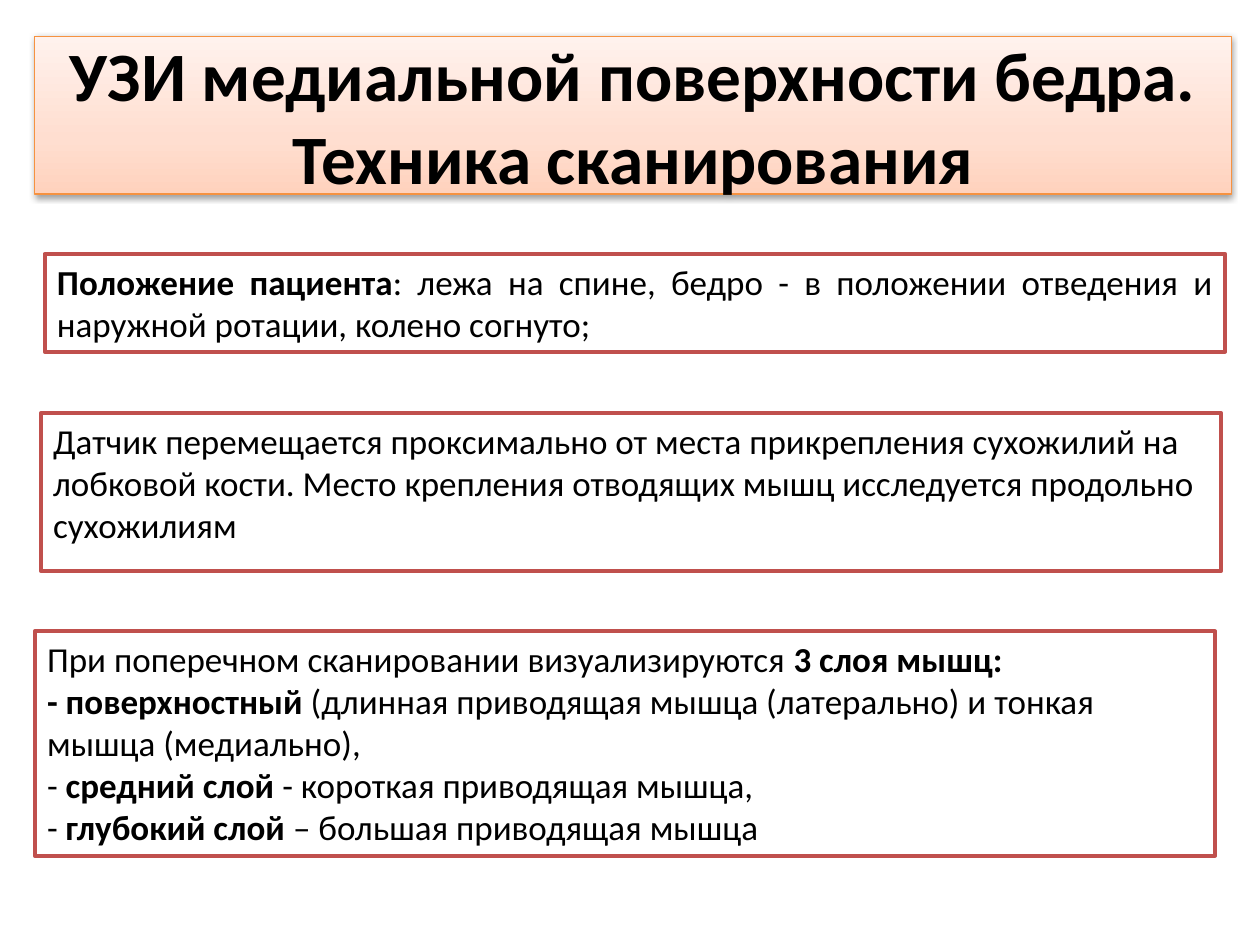
from pptx import Presentation
from pptx.dml.color import RGBColor
from pptx.enum.shapes import MSO_SHAPE
from pptx.enum.text import MSO_ANCHOR, PP_ALIGN
from pptx.oxml import parse_xml
from pptx.oxml.ns import qn
from pptx.util import Cm, Pt

RECTANGLE = MSO_SHAPE.RECTANGLE
TOP, MIDDLE = MSO_ANCHOR.TOP, MSO_ANCHOR.MIDDLE
LEFT, CENTER, JUSTIFY = PP_ALIGN.LEFT, PP_ALIGN.CENTER, PP_ALIGN.JUSTIFY
DRAWING_NS = 'xmlns:a="http://schemas.openxmlformats.org/drawingml/2006/main"'


def color(hex_value):
    return RGBColor.from_string(hex_value)


class ScanSlide:
    font_name = "Calibri"
    text_color = "000000"
    panel_fill = "FFFFFF"
    panel_border = "C0504D"
    heading_border = "F69240"
    heading_stops = ((0, "FFD2BD"), (35, "FFDED0"), (100, "FFF2ED"))

    def __init__(self, presentation):
        self.slide = presentation.slides.add_slide(presentation.slide_layouts[6])

    def box(self, left, top, width, height, border, border_width):
        box = self.slide.shapes.add_shape(
            RECTANGLE, Cm(left), Cm(top), Cm(width), Cm(height))
        box.shadow.inherit = False
        box.line.color.rgb = color(border)
        box.line.width = Pt(border_width)
        return box

    def set_text(self, box, lines, size, align, anchor):
        frame = box.text_frame
        frame.word_wrap = True
        frame.vertical_anchor = anchor
        paragraph = frame.paragraphs[0]
        paragraph.alignment = align
        paragraph.font.name = self.font_name
        paragraph.font.size = Pt(size)
        paragraph.font.color.rgb = color(self.text_color)
        for index, line in enumerate(lines):
            if index:
                paragraph.add_line_break()
            for text, bold in line:
                run = paragraph.add_run()
                run.text = text
                run.font.bold = bold
                run.font.color.rgb = color(self.text_color)

    def heading(self, text, left, top, width, height):
        box = self.box(left, top, width, height, self.heading_border, 0.75)
        box.fill.gradient()
        box.fill.gradient_angle = 90
        properties = box._element.spPr
        stops = "".join(
            f'<a:gs pos="{position * 1000}"><a:srgbClr val="{value}"/></a:gs>'
            for position, value in self.heading_stops)
        gradient = properties.find(qn("a:gradFill"))
        gradient.replace(gradient.find(qn("a:gsLst")),
                         parse_xml(f"<a:gsLst {DRAWING_NS}>{stops}</a:gsLst>"))
        properties.find(qn("a:effectLst")).append(parse_xml(
            f'<a:outerShdw {DRAWING_NS} blurRad="{Pt(3.15)}" dist="{Pt(1.57)}" '
            'dir="5400000" rotWithShape="0"><a:srgbClr val="000000">'
            '<a:alpha val="38000"/></a:srgbClr></a:outerShdw>'))
        self.set_text(box, [[(text, True)]], 39.6, CENTER, MIDDLE)

    def panel(self, lines, left, top, height, align=LEFT):
        box = self.box(left, top, 23.8, height, self.panel_border, 2.25)
        box.fill.solid()
        box.fill.fore_color.rgb = color(self.panel_fill)
        self.set_text(box, lines, 20, align, TOP)


def main():
    presentation = Presentation()
    presentation.slide_width, presentation.slide_height = Cm(25.4), Cm(19.05)
    scan = ScanSlide(presentation)

    scan.heading("УЗИ медиальной поверхности бедра. Техника сканирования",
                 0.7, 0.73, 24.13, 3.18)

    probe_movement = [[(
        "Датчик перемещается проксимально от места прикрепления сухожилий на "
        "лобковой кости. Место крепления отводящих мышц исследуется продольно "
        "сухожилиям", False)]]
    scan.panel(probe_movement, 0.82, 8.33, 3.18)

    patient_position = [[
        ("Положение пациента", True),
        (": лежа на спине, бедро - в положении отведения и наружной ротации, "
         "колено согнуто;", False)]]
    scan.panel(patient_position, 0.9, 5.12, 1.97, JUSTIFY)

    muscle_layers = [
        [("При поперечном сканировании визуализируются ", False),
         ("3 слоя мышц:", True)],
        [("- поверхностный", True),
         (" (длинная приводящая мышца (латерально) и тонкая мышца "
          "(медиально),", False)],
        [("- ", False), ("средний слой ", True),
         ("- короткая приводящая мышца,", False)],
        [("- ", False), ("глубокий слой ", True),
         ("– большая приводящая мышца", False)]]
    scan.panel(muscle_layers, 0.7, 12.73, 4.52)

    presentation.save("out.pptx")


if __name__ == "__main__":
    main()
